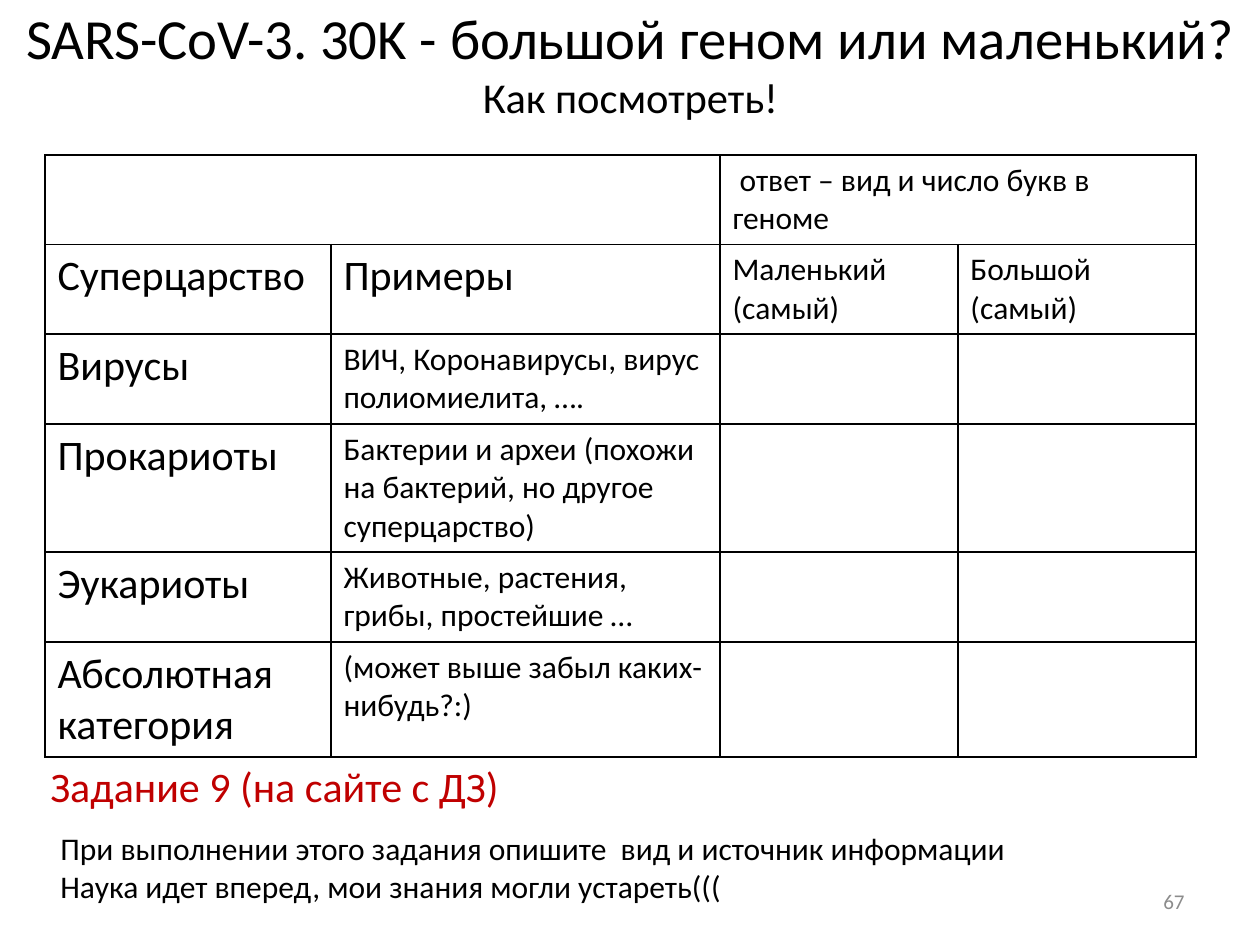
import pptx
import pptx.dml.color
import pptx.enum.text
import pptx.oxml
import pptx.oxml.ns
import pptx.util

PX = 914400 // 126
FONT = "Calibri"
COLORS = {"text": "000000", "task": "C00000", "number": "8C8C8C", "border": "000000"}
ALIGN = pptx.enum.text.PP_ALIGN
ANCHOR = pptx.enum.text.MSO_ANCHOR

COLUMNS = [286, 389, 238, 238]
ROWS = [89, 89, 90, 128, 90, 115]
LARGE, SMALL = 24, 18
HEADER = " ответ – вид и число букв в геноме"
# Each body row: its cells, left to right; "\v" breaks a line, "\n" a paragraph.
GENOMES = [
    ["Суперцарство", "Примеры", "Маленький\v(самый)", "Большой\n(самый)"],
    ["Вирусы", "ВИЧ, Коронавирусы, вирус полиомиелита, ….", "", ""],
    ["Прокариоты", "Бактерии и археи (похожи на бактерий, но другое суперцарство)", "", ""],
    ["Эукариоты", "Животные, растения, грибы, простейшие …", "", ""],
    ["Абсолютная категория", "(может выше забыл каких-нибудь?:)", "", ""],
]


class SlideBuilder:
    def __init__(self, presentation):
        self.slide = presentation.slides.add_slide(presentation.slide_layouts[5])

    def style(self, font, size, color="text"):
        font.name = FONT
        font.size = pptx.util.Pt(size)
        font.color.rgb = pptx.dml.color.RGBColor.from_string(COLORS[color])

    def title(self, box, lines):
        """Fill the title placeholder with (text, size) lines."""
        shape = self.slide.shapes.title
        shape.left, shape.top, shape.width, shape.height = (n * PX for n in box)
        frame = shape.text_frame
        frame.auto_size = pptx.enum.text.MSO_AUTO_SIZE.NONE
        frame.word_wrap = True
        frame.vertical_anchor = ANCHOR.MIDDLE
        paragraph = frame.paragraphs[0]
        paragraph.alignment = ALIGN.CENTER
        for index, (text, size) in enumerate(lines):
            if index:
                paragraph.add_line_break()
            run = paragraph.add_run()
            run.text = text
            self.style(run.font, size)

    def text(self, box, text, size, color="text", align=ALIGN.LEFT, anchor=ANCHOR.TOP):
        frame = self.slide.shapes.add_textbox(*(n * PX for n in box)).text_frame
        frame.word_wrap = True
        frame.vertical_anchor = anchor
        frame.text = text
        for paragraph in frame.paragraphs:
            paragraph.alignment = align
            self.style(paragraph.font, size, color)

    def table(self, left, top, columns, rows):
        frame = self.slide.shapes.add_table(
            len(rows), len(columns), left * PX, top * PX, sum(columns) * PX, sum(rows) * PX)
        table = frame.table
        table.first_row = table.horz_banding = False
        for column, width in zip(table.columns, columns):
            column.width = width * PX
        for row, height in zip(table.rows, rows):
            row.height = height * PX
        for cell in table.iter_cells():
            cell.fill.background()
            self.borders(cell)
            self.cell(cell, "", SMALL)
        return table

    def cell(self, cell, text, size):
        cell.text = text
        for paragraph in cell.text_frame.paragraphs:
            self.style(paragraph.font, size)

    def borders(self, cell):
        properties = cell._tc.get_or_add_tcPr()
        for index, side in enumerate(("lnL", "lnR", "lnT", "lnB")):
            properties.insert(index, pptx.oxml.parse_xml(
                f'<a:{side} {pptx.oxml.ns.nsdecls("a")} w="12700"><a:solidFill>'
                f'<a:srgbClr val="{COLORS["border"]}"/></a:solidFill></a:{side}>'))


def main():
    presentation = pptx.Presentation()
    presentation.slide_width = 1260 * PX
    presentation.slide_height = 945 * PX
    builder = SlideBuilder(presentation)

    builder.title((1, 6, 1259, 112), [
        ("SARS-CoV-3. 30K - большой геном или маленький?", 32.4),
        ("Как посмотреть!", 24.3),
    ])

    table = builder.table(45, 155, COLUMNS, ROWS)
    for left in (0, 2):
        table.cell(0, left).merge(table.cell(0, left + 1))
    builder.cell(table.cell(0, 2), HEADER, SMALL)
    for row, texts in enumerate(GENOMES, start=1):
        for column, text in enumerate(texts):
            large = column == 0 or (row == 1 and column == 1)
            builder.cell(table.cell(row, column), text, LARGE if large else SMALL)

    builder.text((903, 876, 294, 50), "67", 12, "number", ALIGN.RIGHT, ANCHOR.MIDDLE)
    builder.text((38, 754, 1186, 63), "Задание 9 (на сайте с ДЗ)", LARGE, "task")
    builder.text((48, 823, 1010, 89),
                 "При выполнении этого задания опишите  вид и источник информации\n"
                 "Наука идет вперед, мои знания могли устареть(((", SMALL)

    presentation.save("out.pptx")


if __name__ == "__main__":
    main()
